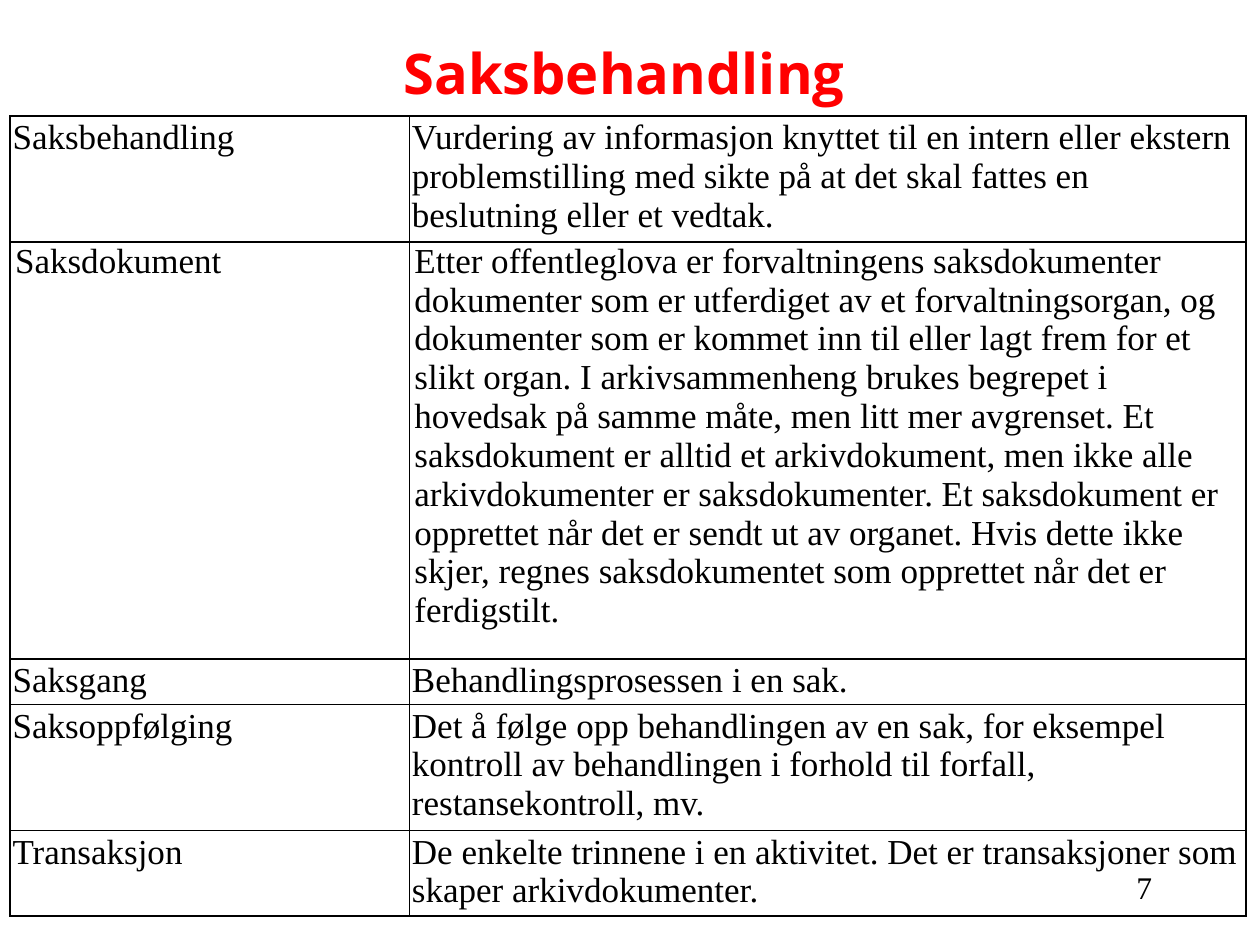
from lxml.etree import fromstring
from pptx import Presentation
from pptx.dml.color import RGBColor
from pptx.enum.text import MSO_ANCHOR, PP_ALIGN
from pptx.oxml.ns import nsdecls
from pptx.util import Inches, Pt

RED = RGBColor(0xFF, 0x00, 0x00)
BLACK = RGBColor(0x00, 0x00, 0x00)
BODY_FONT = "Times New Roman"

COLUMN_WIDTHS = [3.17, 6.64]
TIGHT, FLUSH = (0.02, 0.02), (0.04, 0)  # side and top/bottom cell margins
# Term, definition, row height, cell margins
TERMS = [
    ("Saksbehandling",
     "Vurdering av informasjon knyttet til en intern eller ekstern problemstilling "
     "med sikte på at det skal fattes en beslutning eller et vedtak.", 1, TIGHT),
    ("Saksdokument",
     "Etter offentleglova er forvaltningens saksdokumenter dokumenter som er utferdiget "
     "av et forvaltningsorgan, og dokumenter som er kommet inn til eller lagt frem for et "
     "slikt organ. I arkivsammenheng brukes begrepet i hovedsak på samme måte, men litt mer "
     "avgrenset. Et saksdokument er alltid et arkivdokument, men ikke alle arkivdokumenter "
     "er saksdokumenter. Et saksdokument er opprettet når det er sendt ut av organet. Hvis "
     "dette ikke skjer, regnes saksdokumentet som opprettet når det er ferdigstilt.",
     3.31, FLUSH),
    ("Saksgang", "Behandlingsprosessen i en sak.", 0.36, TIGHT),
    ("Saksoppfølging",
     "Det å følge opp behandlingen av en sak, for eksempel kontroll av behandlingen "
     "i forhold til forfall, restansekontroll, mv.", 1, TIGHT),
    ("Transaksjon",
     "De enkelte trinnene i en aktivitet. Det er transaksjoner som skaper "
     "arkivdokumenter.", 0.68, TIGHT),
]


def style_font(paragraph, **values):
    font = paragraph.runs[0].font
    for attribute, value in values.items():
        if attribute == "color":
            font.color.rgb = value
        else:
            setattr(font, attribute, value)


def add_borders(cell):
    properties = cell._tc.get_or_add_tcPr()
    for position, side in enumerate("LRTB"):
        properties.insert(position, fromstring(
            f'<a:ln{side} {nsdecls("a")} w="{Pt(1)}"><a:solidFill>'
            f'<a:srgbClr val="{BLACK}"/></a:solidFill></a:ln{side}>'))


prs = Presentation()
prs.slide_width, prs.slide_height = Inches(10), Inches(7.5)
slide = prs.slides.add_slide(prs.slide_layouts[5])

# Heading
heading = slide.shapes.title
heading.left, heading.top, heading.width, heading.height = map(
    Inches, (0.58, 0.2, 8.75, 0.69))
heading.text_frame.text = "Saksbehandling"
heading.text_frame.vertical_anchor = MSO_ANCHOR.BOTTOM
heading.text_frame.paragraphs[0].alignment = PP_ALIGN.CENTER
style_font(heading.text_frame.paragraphs[0],
           name="Open Sans", size=Pt(32), bold=True, color=RED)

# Page number, behind the glossary
page_number = slide.shapes.add_textbox(*map(Inches, (8.92, 6.84, 0.58, 0.4))).text_frame
page_number.word_wrap = True
page_number.text = "7"
style_font(page_number.paragraphs[0], name=BODY_FONT, size=Pt(18), color=BLACK)

# Glossary
glossary = slide.shapes.add_table(
    len(TERMS), len(COLUMN_WIDTHS), Inches(0.08), Inches(0.92),
    Inches(sum(COLUMN_WIDTHS)), Inches(sum(term[2] for term in TERMS))).table
glossary.first_row = glossary.horz_banding = False
for column, width in zip(glossary.columns, COLUMN_WIDTHS):
    column.width = Inches(width)

for row, (term, definition, height, (side, edge)) in zip(glossary.rows, TERMS):
    row.height = Inches(height)
    for cell, wording in zip(row.cells, (term, definition)):
        cell.text = wording
        cell.margin_left = cell.margin_right = Inches(side)
        cell.margin_top = cell.margin_bottom = Inches(edge)
        cell.fill.background()
        add_borders(cell)
        paragraph = cell.text_frame.paragraphs[0]
        paragraph.line_spacing = Pt(22.2)
        style_font(paragraph, name=BODY_FONT, size=Pt(20), color=BLACK)

prs.save("out.pptx")
